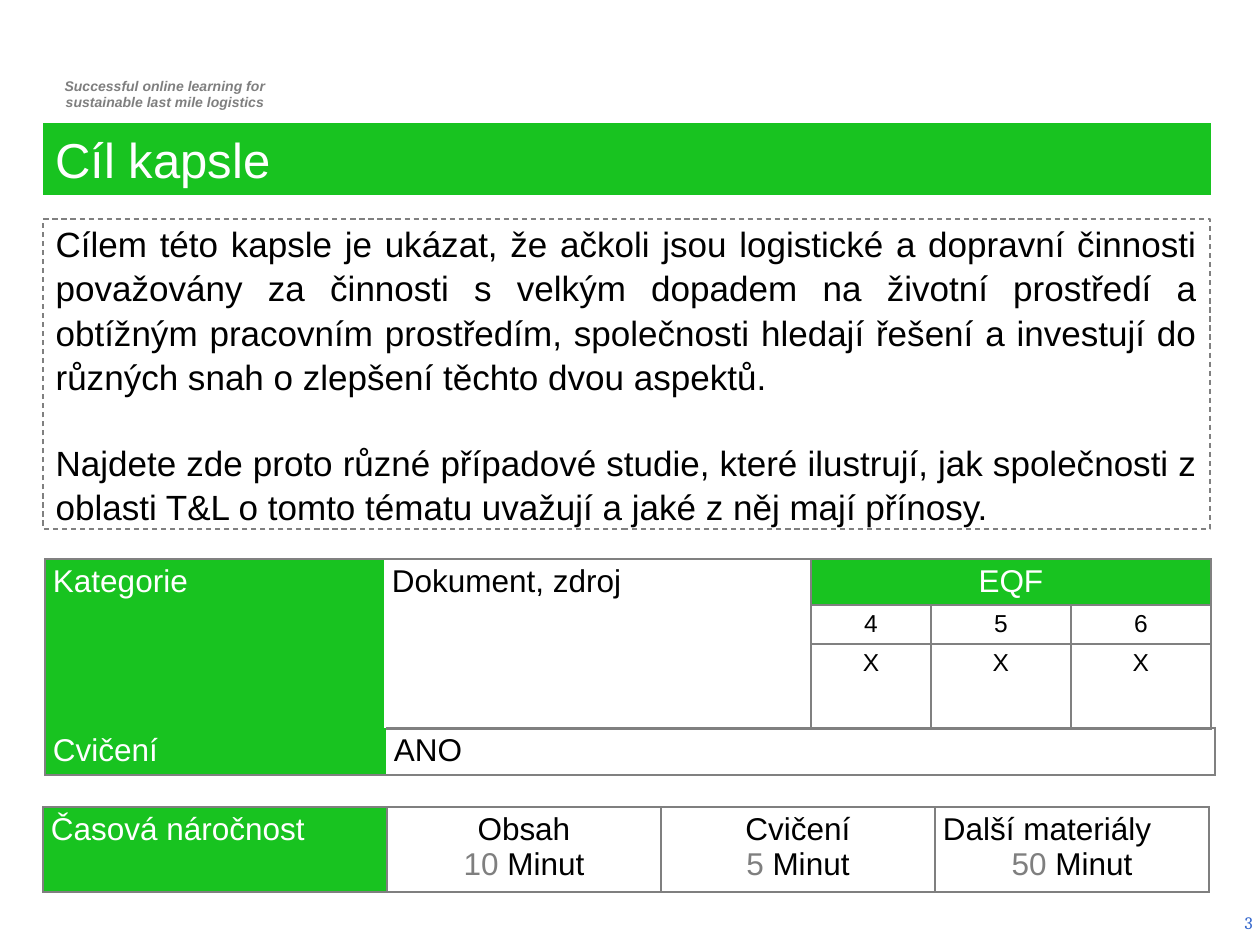
from dataclasses import dataclass

from lxml.etree import SubElement
from pptx import Presentation
from pptx.dml.color import RGBColor
from pptx.enum.dml import MSO_LINE
from pptx.enum.text import MSO_ANCHOR, MSO_AUTO_SIZE, PP_ALIGN
from pptx.oxml.ns import qn
from pptx.util import Pt

EMU_PER_PX = 914400 / 126
GREEN, GREY, DIM, WHITE, BLACK = "18C320", "808080", "7F7F7F", "FFFFFF", "000000"
CENTER, JUSTIFY = PP_ALIGN.CENTER, PP_ALIGN.JUSTIFY
BORDER_TAGS = {"L": "a:lnL", "R": "a:lnR", "T": "a:lnT", "B": "a:lnB"}


@dataclass
class Line:
    """One paragraph; an amount is a dimmed number in front of the text."""
    text: str
    align: PP_ALIGN = JUSTIFY
    amount: str = ""


@dataclass
class Cell:
    row: int
    column: int
    lines: list[Line]
    color: str = BLACK
    fill: str | None = None
    size: int = 18
    rows: int = 1
    columns: int = 1
    sides: str = "LRTB"


@dataclass
class Grid:
    left: int
    top: int
    widths: list[int]
    heights: list[int]
    cells: list[Cell]
    border_color: str = GREY
    border_width: float = 1


def px(length: int) -> int:
    return round(length * EMU_PER_PX)


def rgb(color: str) -> RGBColor:
    return RGBColor.from_string(color)


def set_font(font, size: int, color: str, name: str = "Arial") -> None:
    font.size, font.name = Pt(size), name
    font.color.rgb = rgb(color)


def place(shape, left: int, top: int, width: int, height: int) -> None:
    shape.left, shape.top = px(left), px(top)
    shape.width, shape.height = px(width), px(height)
    shape.text_frame.auto_size = MSO_AUTO_SIZE.NONE
    shape.text_frame.word_wrap = True


def add_text(slide, box: tuple[int, int, int, int], lines: list[str], align: PP_ALIGN,
             size: int, color: str, name: str = "Arial"):
    shape = slide.shapes.add_textbox(0, 0, 0, 0)
    place(shape, *box)
    frame = shape.text_frame
    frame.text = "\n".join(lines)
    for paragraph in frame.paragraphs:
        paragraph.alignment = align
        set_font(paragraph.font, size, color, name)
    return shape


def fill_title(title) -> None:
    place(title, 43, 123, 1168, 72)
    title.fill.solid()
    title.fill.fore_color.rgb = rgb(GREEN)
    title.text_frame.text = "Cíl kapsle"
    title.text_frame.vertical_anchor = MSO_ANCHOR.MIDDLE
    paragraph = title.text_frame.paragraphs[0]
    paragraph.alignment = PP_ALIGN.LEFT
    set_font(paragraph.font, 28, WHITE)


def fill_body(body, texts: list[str]) -> None:
    place(body, 43, 219, 1167, 310)
    body.line.color.rgb = rgb(GREY)
    body.line.width = Pt(0.75)
    body.line.dash_style = MSO_LINE.DASH
    frame = body.text_frame
    frame.vertical_anchor = MSO_ANCHOR.MIDDLE
    frame.text = "\n".join(texts)
    for index, paragraph in enumerate(frame.paragraphs):
        properties = paragraph._p.get_or_add_pPr()
        properties.set("marL", "0")
        properties.set("indent", "0")
        SubElement(properties, qn("a:buNone"))
        paragraph.alignment = JUSTIFY
        paragraph.line_spacing = 1.05
        paragraph.space_before = Pt(24 if index else 0)
        set_font(paragraph.font, 20, BLACK)


def set_borders(cell, sides: str, color: str, width: float) -> None:
    properties = cell._tc.get_or_add_tcPr()
    for position, (side, tag) in enumerate(BORDER_TAGS.items()):
        line = SubElement(properties, qn(tag), w=str(Pt(width)))
        properties.insert(position, line)
        if side in sides:
            fill = SubElement(line, qn("a:solidFill"))
            SubElement(fill, qn("a:srgbClr"), val=color)
        else:
            SubElement(line, qn("a:noFill"))


def write_lines(frame, cell: Cell) -> None:
    for index, line in enumerate(cell.lines):
        paragraph = frame.add_paragraph() if index else frame.paragraphs[0]
        paragraph.alignment = line.align
        if line.amount:
            amount = paragraph.add_run()
            amount.text = f"{line.amount} "
            set_font(amount.font, cell.size, DIM)
        run = paragraph.add_run()
        run.text = line.text
        set_font(run.font, cell.size, cell.color)


def add_grid(slide, grid: Grid) -> None:
    table = slide.shapes.add_table(
        len(grid.heights), len(grid.widths), px(grid.left), px(grid.top),
        px(sum(grid.widths)), px(sum(grid.heights))).table
    table.first_row = table.horz_banding = False
    for column, width in zip(table.columns, grid.widths):
        column.width = px(width)
    for row, height in zip(table.rows, grid.heights):
        row.height = px(height)
    for cell in grid.cells:
        origin = table.cell(cell.row, cell.column)
        if cell.rows * cell.columns > 1:
            origin.merge(table.cell(cell.row + cell.rows - 1,
                                    cell.column + cell.columns - 1))
        for row in range(cell.row, cell.row + cell.rows):
            for column in range(cell.column, cell.column + cell.columns):
                part = table.cell(row, column)
                if cell.fill:
                    part.fill.solid()
                    part.fill.fore_color.rgb = rgb(cell.fill)
                else:
                    part.fill.background()
                set_borders(part, cell.sides, grid.border_color, grid.border_width)
        origin.margin_left = origin.margin_right = px(8)
        origin.margin_top = origin.margin_bottom = px(5)
        write_lines(origin.text_frame, cell)


def label(text: str, sides: str, rows: int = 1) -> Cell:
    return Cell(0, 0, [Line(text)], WHITE, GREEN, rows=rows, sides=sides)


def main() -> None:
    presentation = Presentation()
    presentation.slide_width, presentation.slide_height = px(1260), px(945)
    slide = presentation.slides.add_slide(presentation.slide_layouts[1])

    motto = add_text(slide, (37, 71, 256, 47),
                     ["Successful online learning for", "sustainable last mile logistics"],
                     CENTER, 8, DIM)
    for paragraph in motto.text_frame.paragraphs:
        paragraph.font.bold = paragraph.font.italic = True
    number = add_text(slide, (971, 898, 294, 50), ["3"], PP_ALIGN.RIGHT, 10, "3366CC", "Cambria")
    number.text_frame.vertical_anchor = MSO_ANCHOR.MIDDLE

    fill_title(slide.shapes.title)
    fill_body(slide.placeholders[1], [
        "Cílem této kapsle je ukázat, že ačkoli jsou logistické a dopravní činnosti "
        "považovány za činnosti s velkým dopadem na životní prostředí a obtížným pracovním "
        "prostředím, společnosti hledají řešení a investují do různých snah o zlepšení "
        "těchto dvou aspektů.",
        "Najdete zde proto různé případové studie, které ilustrují, jak společnosti z "
        "oblasti T&L o tomto tématu uvažují a jaké z něj mají přínosy.",
    ])

    levels = [Cell(row, column, [Line(text, CENTER)], size=14)
              for row, texts in enumerate(["456", "XXX"], start=1)
              for column, text in enumerate(texts, start=2)]
    add_grid(slide, Grid(45, 559, [339, 427, 120, 140, 140], [46, 39, 85], [
        label("Kategorie", "LT", rows=3),
        Cell(0, 1, [Line("Dokument, zdroj")], rows=3, sides="RTB"),
        Cell(0, 2, [Line("EQF", CENTER)], WHITE, GREEN, columns=3),
        *levels]))
    add_grid(slide, Grid(45, 728, [341, 829], [47], [
        label("Cvičení", "LB"), Cell(0, 1, [Line("ANO")], sides="RTB")]))

    durations = [("Obsah", CENTER, "10"), ("Cvičení", CENTER, "5"),
                 ("Další materiály", JUSTIFY, "50")]
    add_grid(slide, Grid(43, 807, [344, 274, 274, 274], [85], [
        label("Časová náročnost", "LRTB"),
        *(Cell(0, column, [Line(name, align), Line("Minut", CENTER, minutes)])
          for column, (name, align, minutes) in enumerate(durations, start=1))],
        border_color=DIM, border_width=0.91))

    presentation.save("out.pptx")


if __name__ == "__main__":
    main()
